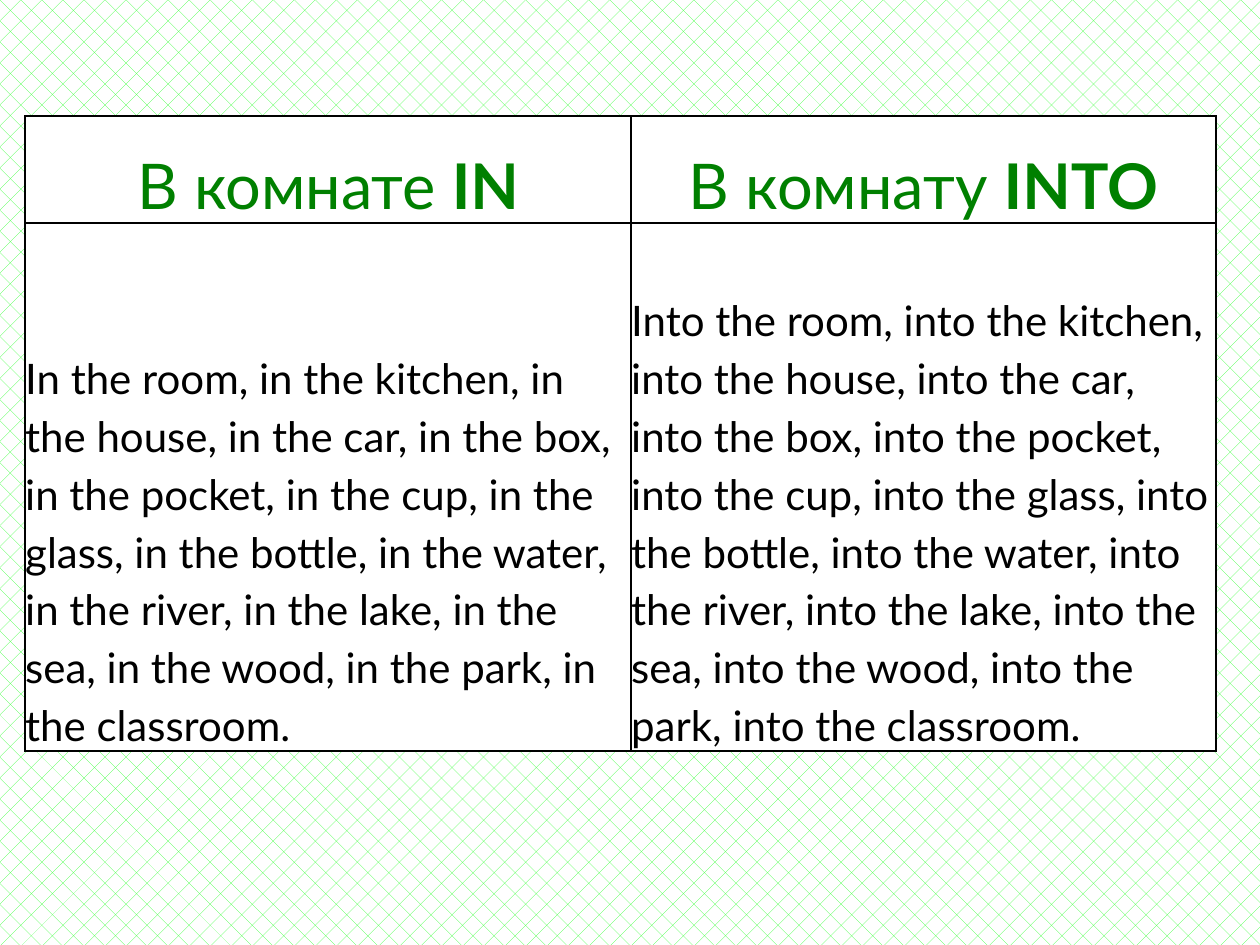
import pptx
import pptx.dml.color
import pptx.enum.dml
import pptx.enum.text
import pptx.util
import lxml.etree
import pptx.oxml.ns

Pt = pptx.util.Pt
RGBColor = pptx.dml.color.RGBColor
PP_ALIGN = pptx.enum.text.PP_ALIGN

BLACK = RGBColor(0x00, 0x00, 0x00)
WHITE = RGBColor(0xFF, 0xFF, 0xFF)
GREEN = RGBColor(0x00, 0x80, 0x00)
LIGHT_GREEN = RGBColor(0x37, 0xFF, 0x37)

COLUMN_WIDTHS = [346.3, 334.1]
ROW_HEIGHTS = [61.2, 301.7]
HEADINGS = [("В комнате ", "IN"), ("В комнату ", "INTO")]
EXAMPLES = [
    "In the room, in the kitchen, in the house, in the car, in the box, "
    "in the pocket, in the cup, in the glass, in the bottle, in the water, "
    "in the river, in the lake, in the sea, in the wood, in the park, "
    "in the classroom.",
    "Into the room, into the kitchen, into the house, into the car, "
    "into the box, into the pocket, into the cup, into the glass, "
    "into the bottle, into the water, into the river, into the lake, "
    "into the sea, into the wood, into the park, into the classroom.",
]


def add_run(paragraph, text, size, color, bold=False):
    run = paragraph.add_run()
    run.text = text
    run.font.name = "Lato"
    run.font.size = Pt(size)
    run.font.bold = bold
    run.font.color.rgb = color


def format_cell(cell):
    cell.margin_left = cell.margin_right = 0
    cell.margin_top = cell.margin_bottom = 0
    cell.vertical_anchor = pptx.enum.text.MSO_ANCHOR.BOTTOM
    cell.fill.solid()
    cell.fill.fore_color.rgb = WHITE
    properties = cell._tc.get_or_add_tcPr()
    qualify = pptx.oxml.ns.qn
    for position, side in enumerate(("lnL", "lnR", "lnT", "lnB")):
        border = lxml.etree.Element(qualify(f"a:{side}"), w=str(Pt(1)))
        fill = lxml.etree.SubElement(border, qualify("a:solidFill"))
        lxml.etree.SubElement(fill, qualify("a:srgbClr"), val=str(BLACK))
        properties.insert(position, border)


presentation = pptx.Presentation()
presentation.slide_width = Pt(720)
presentation.slide_height = Pt(540)
slide = presentation.slides.add_slide(presentation.slide_layouts[6])

background = slide.background.fill
background.patterned()
background.pattern = pptx.enum.dml.MSO_PATTERN.DOTTED_DIAMOND
background.fore_color.rgb = LIGHT_GREEN
background.back_color.rgb = WHITE

table = slide.shapes.add_table(
    2, 2, Pt(14.4), Pt(66.2), Pt(sum(COLUMN_WIDTHS)), Pt(sum(ROW_HEIGHTS))
).table
table.first_row = False
table.horz_banding = False
for row, height in zip(table.rows, ROW_HEIGHTS):
    row.height = Pt(height)

for index, width in enumerate(COLUMN_WIDTHS):
    table.columns[index].width = Pt(width)
    heading_cell, example_cell = table.cell(0, index), table.cell(1, index)
    format_cell(heading_cell)
    format_cell(example_cell)

    heading = heading_cell.text_frame.paragraphs[0]
    heading.alignment = PP_ALIGN.CENTER
    heading.line_spacing = Pt(11.5)
    phrase, preposition = HEADINGS[index]
    add_run(heading, phrase, 36, GREEN)
    add_run(heading, preposition, 36, GREEN, bold=True)

    example = example_cell.text_frame.paragraphs[0]
    example.alignment = PP_ALIGN.LEFT
    example.line_spacing = 1.15
    add_run(example, EXAMPLES[index], 24, BLACK)

presentation.save("out.pptx")
